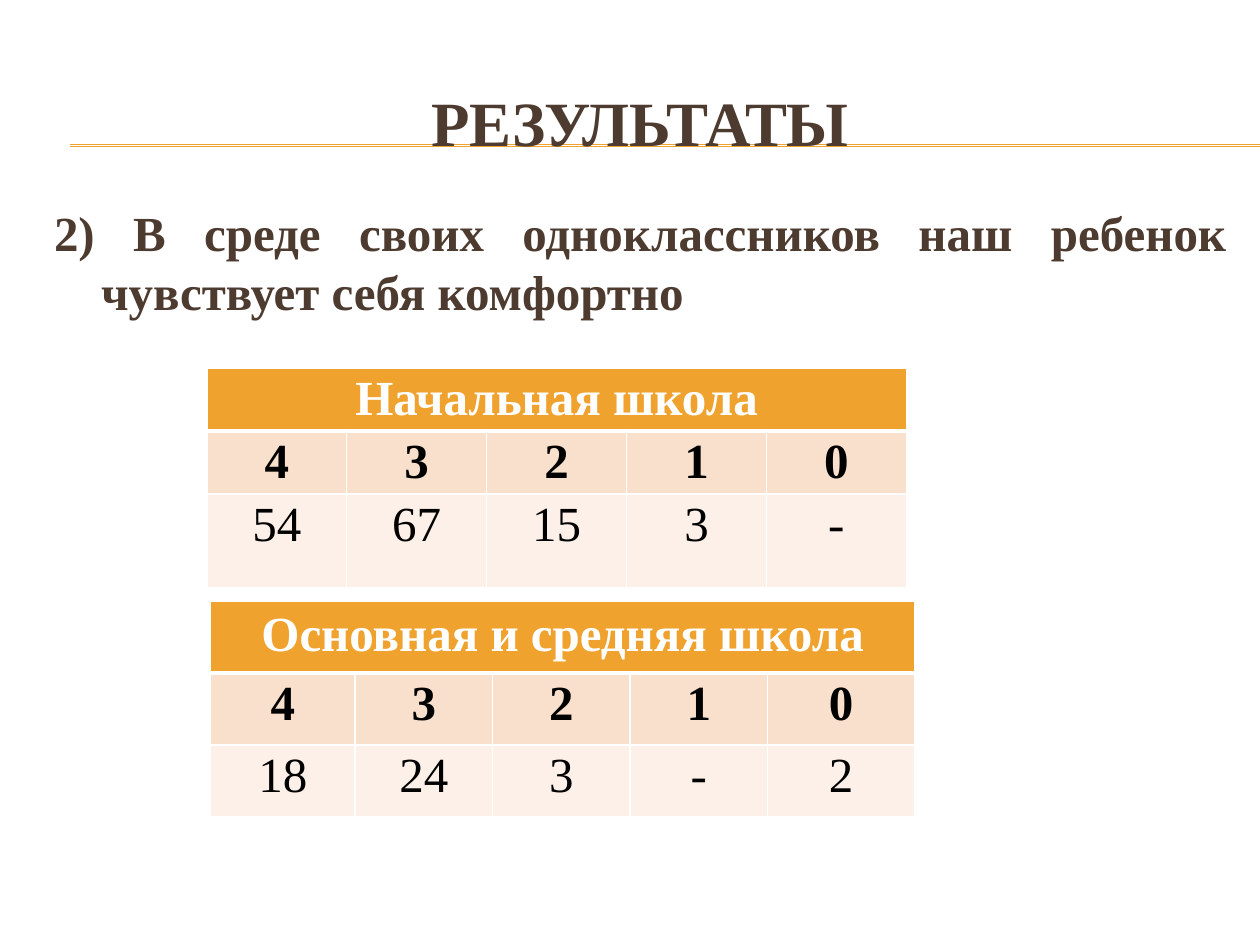
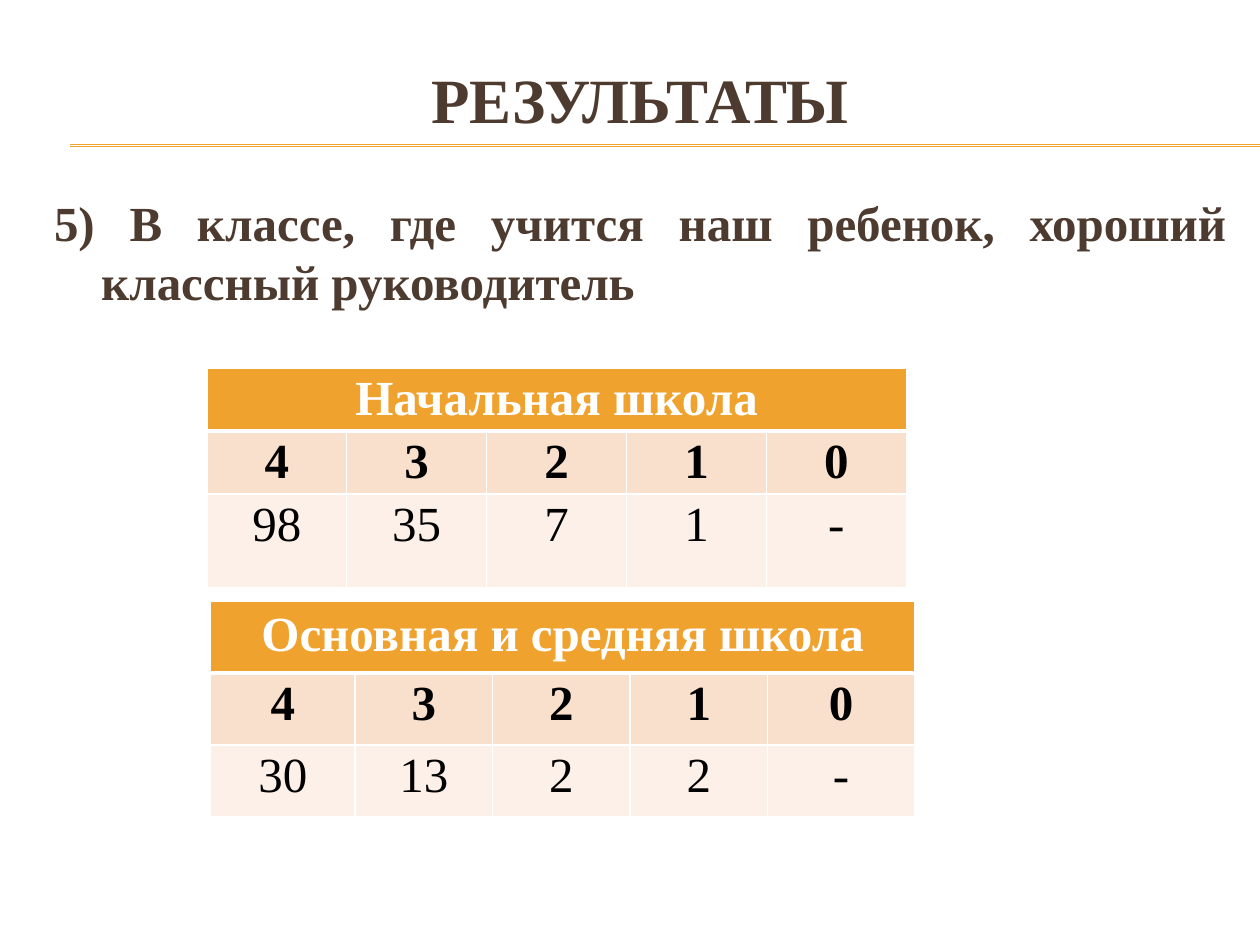
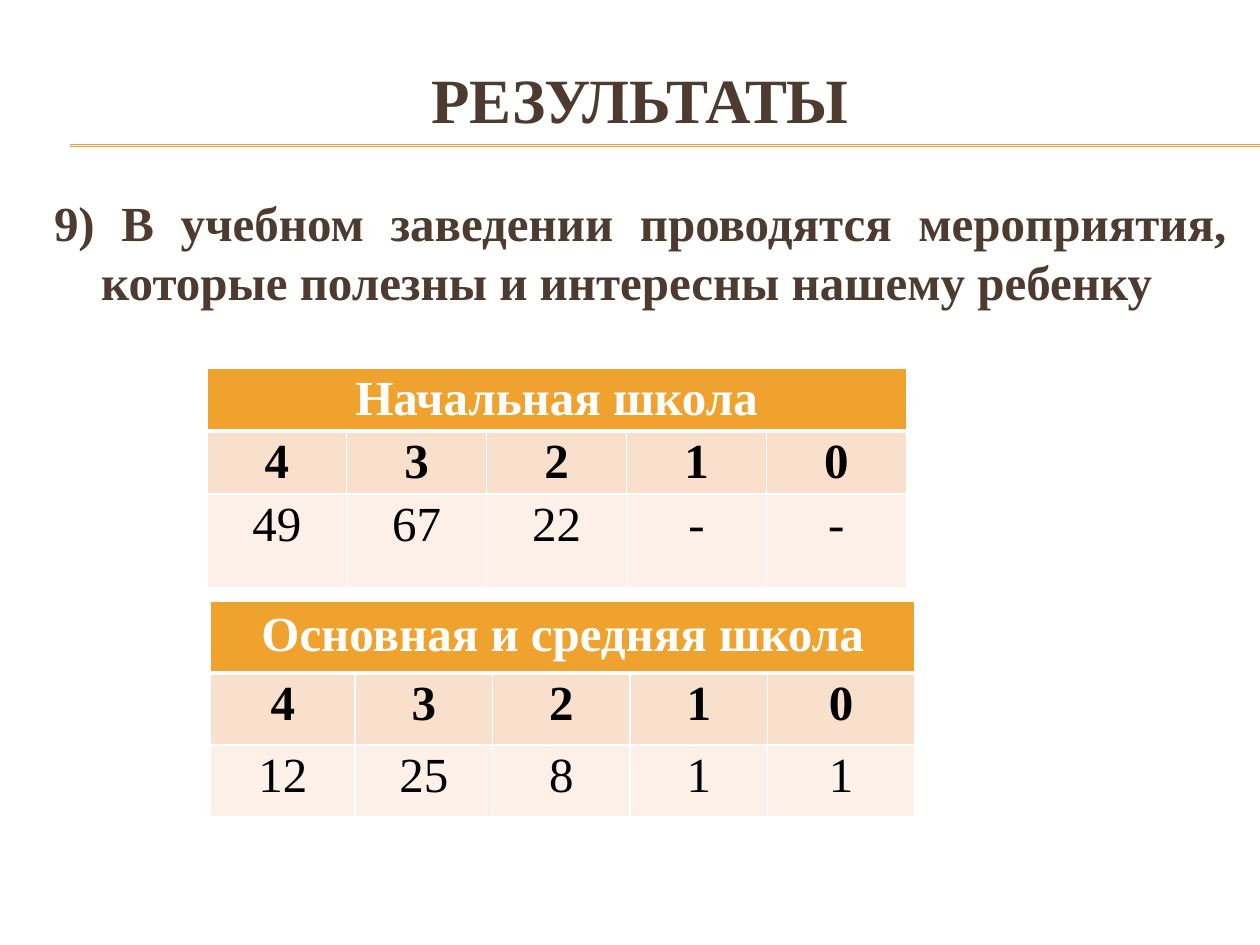
from lxml import etree
from pptx import Presentation
from pptx.dml.color import RGBColor
from pptx.enum.shapes import MSO_CONNECTOR
from pptx.enum.text import MSO_ANCHOR, PP_ALIGN
from pptx.oxml.ns import qn
from pptx.util import Cm, Pt

STRAIGHT = MSO_CONNECTOR.STRAIGHT
MIDDLE = MSO_ANCHOR.MIDDLE
CENTER, JUSTIFY = PP_ALIGN.CENTER, PP_ALIGN.JUSTIFY

ORANGE = RGBColor(0xF0, 0xA2, 0x2E)
PEACH = RGBColor(0xF9, 0xE0, 0xCD)
CREAM = RGBColor(0xFC, 0xF0, 0xE8)
BROWN = RGBColor(0x4E, 0x3B, 0x30)
WHITE = RGBColor(0xFF, 0xFF, 0xFF)
BLACK = RGBColor(0, 0, 0)

FONT = "Times New Roman"
TITLE = "РЕЗУЛЬТАТЫ"
LEFT, WIDTH = 0.84, 24.13
RATINGS = ["4", "3", "2", "1", "0"]
ROW_STYLES = [(ORANGE, WHITE, True), (PEACH, BLACK, True), (CREAM, BLACK, False)]

# name, left, top, height, column widths, row heights, compact header
PRIMARY = ("Начальная школа", 4.17, 7.42, 4.42, [2.82] * 5, [0.89, 0.89, 1.88], True)
SECONDARY = ("Основная и средняя школа", 4.24, 12.12, 4.37,
             [2.92, 2.77, 2.77, 2.77, 2.97], [1.45] * 3, False)

# title top and height, question top and height
LOW = (1.27, 2.34, 3.96, 12.93)
HIGH = (0.79, 2.39, 3.76, 13.11)

SLIDES = [
    (LOW, "2) В среде своих одноклассников наш ребенок чувствует себя комфортно",
     ["54", "67", "15", "3", "-"], ["18", "24", "3", "-", "2"]),
    (HIGH, "5) В классе, где учится наш ребенок, хороший классный руководитель",
     ["98", "35", "7", "1", "-"], ["30", "13", "2", "2", "-"]),
    (HIGH, "9) В учебном заведении проводятся мероприятия, которые полезны и "
           "интересны нашему ребенку",
     ["49", "67", "22", "-", "-"], ["12", "25", "8", "1", "1"]),
]


class Deck:
    def __init__(self):
        self.prs = Presentation()
        self.prs.slide_width, self.prs.slide_height = Cm(25.4), Cm(19.05)
        self.s = None

    def add_slide(self):
        self.s = self.prs.slides.add_slide(self.prs.slide_layouts[5])

    def put_text(self, tf, text, size, color, bold, align):
        tf.text = text
        p = tf.paragraphs[0]
        p.alignment = align
        for r in p.runs:
            r.font.name, r.font.size = FONT, Pt(size)
            r.font.bold, r.font.color.rgb = bold, color
        return p

    def title(self, text, top, height):
        sp = self.s.shapes.title
        sp.left, sp.top, sp.width, sp.height = Cm(LEFT), Cm(top), Cm(WIDTH), Cm(height)
        sp.text_frame.vertical_anchor = MIDDLE
        self.put_text(sp.text_frame, text, 36, BROWN, True, CENTER)

    def rule(self, y):
        """Draw a horizontal line behind the title."""
        line = self.s.shapes.add_connector(STRAIGHT, Cm(1.42), Cm(y), Cm(25.4), Cm(y))
        line.line.color.rgb, line.line.width = ORANGE, Pt(0.75)
        etree.SubElement(line.element.spPr, qn("a:effectLst"))
        self.s.shapes.title.element.addprevious(line.element)

    def question(self, text, top, height):
        sp = self.s.shapes.add_textbox(Cm(LEFT), Cm(top), Cm(WIDTH), Cm(height))
        sp.text_frame.word_wrap = True
        p = self.put_text(sp.text_frame, text, 28, BROWN, True, JUSTIFY)
        pPr = p._p.get_or_add_pPr()
        pPr.set("marL", str(Cm(0.95)))
        pPr.set("indent", str(-Cm(0.95)))

    def borders(self, cell, row):
        tcPr = cell._tc.get_or_add_tcPr()
        widths = {"lnL": 1, "lnR": 1, "lnT": 3 if row == 1 else 1, "lnB": 3 if row == 0 else 1}
        for tag, width in widths.items():
            ln = etree.SubElement(tcPr, qn("a:" + tag), w=str(Pt(width)))
            fill = etree.SubElement(ln, qn("a:solidFill"))
            etree.SubElement(fill, qn("a:srgbClr"), val=str(WHITE))

    def table(self, layout, counts):
        name, left, top, height, widths, heights, compact_header = layout
        frame = self.s.shapes.add_table(len(heights), len(widths), Cm(left), Cm(top),
                                        Cm(sum(widths)), Cm(height))
        table = frame.table
        for column, width in zip(table.columns, widths):
            column.width = Cm(width)
        for row, row_height in zip(table.rows, heights):
            row.height = Cm(row_height)
        frame.height = Cm(height)
        table.cell(0, 0).merge(table.cell(0, len(widths) - 1))

        for i, texts in enumerate([[name], RATINGS, counts]):
            fill, color, bold = ROW_STYLES[i]
            for j in range(len(widths)):
                cell = table.cell(i, j)
                self.borders(cell, i)
                cell.fill.solid()
                cell.fill.fore_color.rgb = fill
                if j >= len(texts):
                    continue
                p = self.put_text(cell.text_frame, texts[j], 28, color, bold, CENTER)
                if i > 0 or compact_header:
                    p.line_spacing = 1.07
                    cell.margin_left = cell.margin_right = Cm(0.18)
                    cell.margin_top = cell.margin_bottom = 0


def main():
    deck = Deck()
    for (title_top, title_height, top, height), question, primary, secondary in SLIDES:
        deck.add_slide()
        deck.title(TITLE, title_top, title_height)
        for y in (2.92, 2.95):
            deck.rule(y)
        deck.question(question, top, height)
        deck.table(PRIMARY, primary)
        deck.table(SECONDARY, secondary)
    deck.prs.save("out.pptx")


if __name__ == "__main__":
    main()
